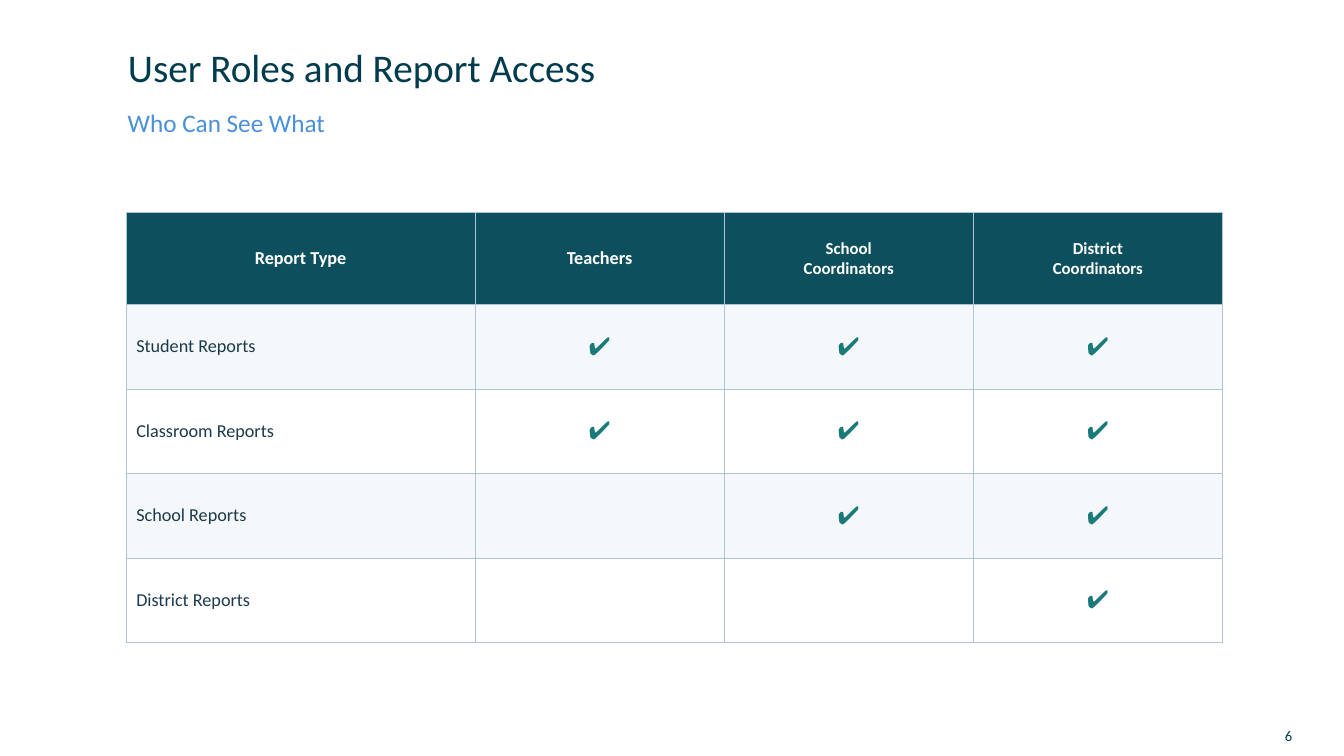
from lxml.etree import SubElement
from pptx import Presentation
from pptx.dml.color import RGBColor
from pptx.enum.text import MSO_ANCHOR as Anchor, MSO_AUTO_SIZE as AutoSize, PP_ALIGN as Align
from pptx.oxml.ns import qn
from pptx.util import Cm, Pt

FONT = "Calibri"
COLORS = {
    "title": "003C4D",
    "subtitle": "4A90D9",
    "header": "0D4F5C",
    "white": "FFFFFF",
    "band": "F5F8FA",
    "label": "1B3A4B",
    "check": "1A7A7A",
    "border": "B0C4D8",
}
HEADERS = ["Report Type", "Teachers", "School\nCoordinators", "District\nCoordinators"]
# Each report with its access for teachers, school and district coordinators
REPORT_ACCESS = [
    ("Student Reports", (True, True, True)),
    ("Classroom Reports", (True, True, True)),
    ("School Reports", (False, True, True)),
    ("District Reports", (False, False, True)),
]
COLUMN_WIDTHS = [Cm(8.79)] + [Cm(6.28)] * 3
ROW_HEIGHTS = [Cm(2.31)] + [Cm(2.13)] * len(REPORT_ACCESS)


def rgb(name):
    return RGBColor.from_string(COLORS[name])


def write_text(text_frame, text, size, color, align=Align.LEFT, bold=False):
    text_frame.text = text
    for paragraph in text_frame.paragraphs:
        paragraph.alignment = align
        for run in paragraph.runs:
            run.font.name = FONT
            run.font.size = Pt(size)
            run.font.bold = bold
            run.font.color.rgb = rgb(color)


def place(shape, left, top, width, height):
    shape.left, shape.top, shape.width, shape.height = left, top, width, height


def add_title(slide, text):
    title = slide.shapes.title
    place(title, Cm(2.97), Cm(1.02), Cm(29.87), Cm(1.5))
    write_text(title.text_frame, text, 28, "title")
    title.text_frame.auto_size = AutoSize.NONE
    title.text_frame.vertical_anchor = Anchor.MIDDLE
    title.text_frame.paragraphs[0].line_spacing = 0.9


def add_text(slide, box, text, size, color, align=Align.LEFT, anchor=Anchor.TOP):
    text_frame = slide.shapes.add_textbox(*box).text_frame
    text_frame.word_wrap = True
    text_frame.vertical_anchor = anchor
    write_text(text_frame, text, size, color, align)


def set_borders(cell):
    properties = cell._tc.get_or_add_tcPr()
    for position, side in enumerate(("a:lnL", "a:lnR", "a:lnT", "a:lnB")):
        line = SubElement(properties, qn(side), w=str(Pt(0.5)))
        fill = SubElement(line, qn("a:solidFill"))
        SubElement(fill, qn("a:srgbClr"), val=COLORS["border"])
        # Border lines come before the cell fill
        properties.insert(position, line)


def style_cell(cell, fill):
    cell.vertical_anchor = Anchor.MIDDLE
    cell.fill.solid()
    cell.fill.fore_color.rgb = rgb(fill)
    set_borders(cell)


def add_access_table(slide):
    table = slide.shapes.add_table(
        len(ROW_HEIGHTS), len(COLUMN_WIDTHS), Cm(3.18), Cm(5.36),
        sum(COLUMN_WIDTHS), sum(ROW_HEIGHTS)).table
    for column, width in zip(table.columns, COLUMN_WIDTHS):
        column.width = width
    for row, height in zip(table.rows, ROW_HEIGHTS):
        row.height = height

    # Header row
    for column, header in enumerate(HEADERS):
        cell = table.cell(0, column)
        style_cell(cell, "header")
        size = 12 if "\n" in header else 13
        write_text(cell.text_frame, header, size, "white", Align.CENTER, bold=True)

    # One banded row for each report
    for row, (report, access) in enumerate(REPORT_ACCESS, start=1):
        fill = "band" if row % 2 else "white"
        label = table.cell(row, 0)
        style_cell(label, fill)
        write_text(label.text_frame, report, 13, "label")
        for column, allowed in enumerate(access, start=1):
            cell = table.cell(row, column)
            style_cell(cell, fill)
            if allowed:
                write_text(cell.text_frame, "✔", 18, "check", Align.CENTER)


def main():
    presentation = Presentation()
    presentation.slide_width = Cm(33.87)
    presentation.slide_height = Cm(19.05)
    title_only = presentation.slide_layouts[5]
    slide = presentation.slides.add_slide(title_only)

    # Headings
    add_title(slide, "User Roles and Report Access")
    subtitle_box = (Cm(2.97), Cm(2.57), Cm(29.87), Cm(1.78))
    add_text(slide, subtitle_box, "Who Can See What", 18, "subtitle")

    # Access by role
    add_access_table(slide)

    # Slide number
    number_box = (Cm(30.81), Cm(18.03), Cm(2.01), Cm(1.02))
    add_text(slide, number_box, "6", 10.5, "title", Align.RIGHT, Anchor.MIDDLE)

    presentation.save("out.pptx")


if __name__ == "__main__":
    main()
